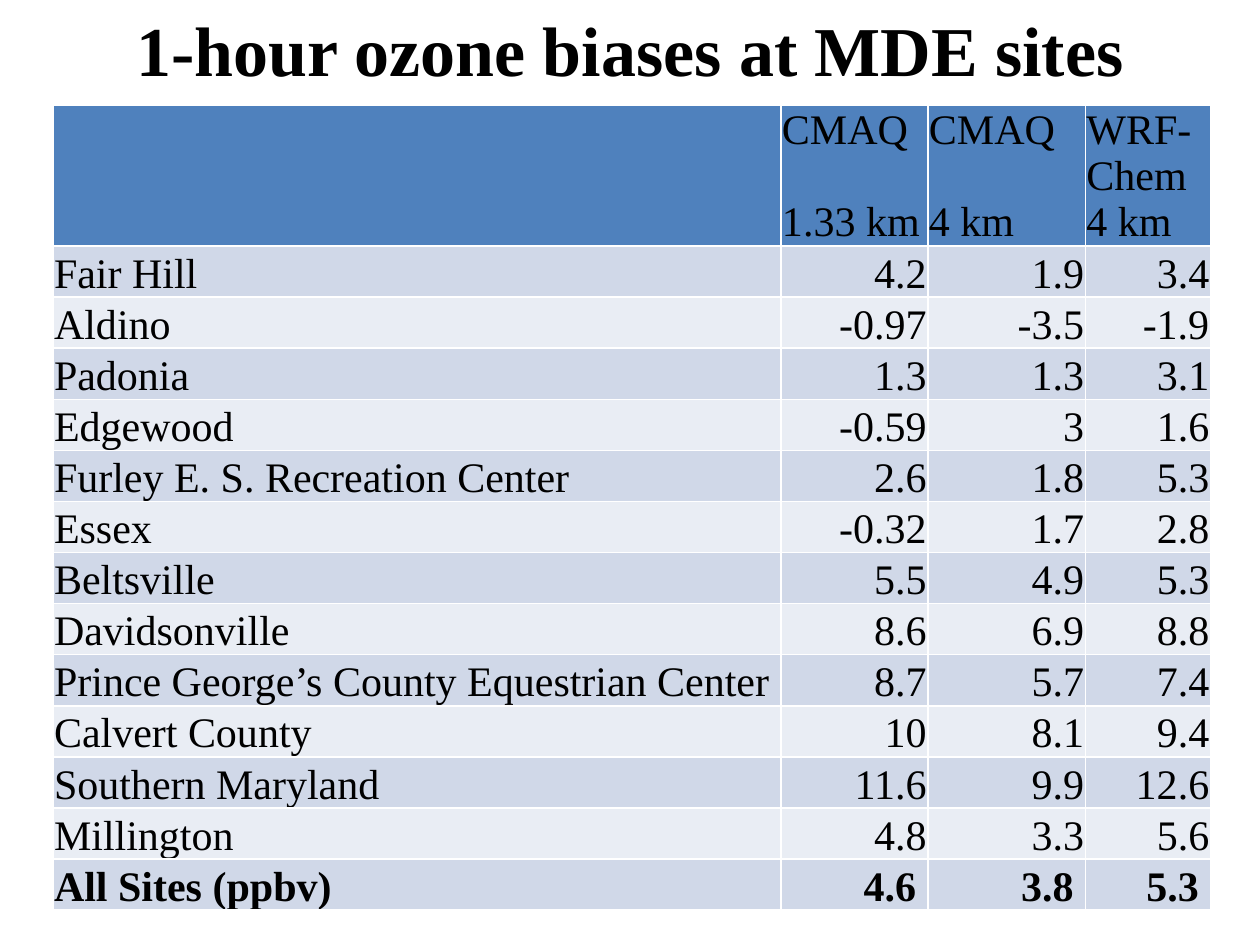
from lxml import etree
from pptx import Presentation
from pptx.dml.color import RGBColor
from pptx.enum import text
from pptx.oxml import ns
from pptx.util import Pt

FONT = "Times New Roman"
BLACK, WHITE = "000000", "FFFFFF"
HEADER_FILL = "4F81BD"
BAND_FILLS = ("D0D8E8", "E9EDF4")
BODY_SIZE = 24
LINE_HEIGHT = 26.6

COLUMN_WIDTHS = (416, 84, 90, 71.5)
HEADER_HEIGHT, ROW_HEIGHT = 79.4, 29.2

HEADERS = (
    (),
    ("CMAQ", "1.33 km"),
    ("CMAQ", "4 km"),
    ("WRF-Chem 4 km",),
)
SITE_BIASES = (
    ("Fair Hill", "4.2", "1.9", "3.4"),
    ("Aldino", "-0.97", "-3.5", "-1.9"),
    ("Padonia", "1.3", "1.3", "3.1"),
    ("Edgewood", "-0.59", "3", "1.6"),
    ("Furley E. S. Recreation Center", "2.6", "1.8", "5.3"),
    ("Essex", "-0.32", "1.7", "2.8"),
    ("Beltsville", "5.5", "4.9", "5.3"),
    ("Davidsonville", "8.6", "6.9", "8.8"),
    ("Prince George’s County Equestrian Center", "8.7", "5.7", "7.4"),
    ("Calvert County", "10", "8.1", "9.4"),
    ("Southern Maryland", "11.6", "9.9", "12.6"),
    ("Millington", "4.8", "3.3", "5.6"),
    ("All Sites (ppbv)", "4.6 ", "3.8 ", "5.3 "),
)


def color(hex_string):
    return RGBColor.from_string(hex_string)


def add_run(paragraph, words, size, bold=False):
    run = paragraph.add_run()
    run.text = words
    run.font.name = FONT
    run.font.size = Pt(size)
    run.font.bold = bold
    run.font.color.rgb = color(BLACK)


def set_borders(cell, hex_string, width):
    properties = cell._tc.get_or_add_tcPr()
    for position, side in enumerate(("lnL", "lnR", "lnT", "lnB")):
        line = etree.Element(ns.qn(f"a:{side}"), w=str(Pt(width)))
        fill = etree.SubElement(line, ns.qn("a:solidFill"))
        etree.SubElement(fill, ns.qn("a:srgbClr"), val=hex_string)
        properties.insert(position, line)


def fill_cell(cell, lines, fill, alignment, bold=False):
    cell.margin_left = cell.margin_right = cell.margin_top = Pt(0.7)
    cell.margin_bottom = Pt(0)
    cell.vertical_anchor = text.MSO_ANCHOR.BOTTOM
    cell.fill.solid()
    cell.fill.fore_color.rgb = color(fill)
    set_borders(cell, WHITE, 1)
    frame = cell.text_frame
    for number, words in enumerate(lines):
        paragraph = frame.add_paragraph() if number else frame.paragraphs[0]
        paragraph.alignment = alignment
        if number:
            paragraph.space_before = Pt(LINE_HEIGHT)
        add_run(paragraph, words, BODY_SIZE, bold)


def add_title(slide, words):
    shape = slide.shapes.add_textbox(Pt(30), Pt(0), Pt(660), Pt(55.5))
    frame = shape.text_frame
    frame.word_wrap = True
    frame.auto_size = text.MSO_AUTO_SIZE.SHAPE_TO_FIT_TEXT
    frame.paragraphs[0].alignment = text.PP_ALIGN.CENTER
    add_run(frame.paragraphs[0], words, 40, bold=True)


def add_bias_table(slide):
    row_count = len(SITE_BIASES) + 1
    height = HEADER_HEIGHT + ROW_HEIGHT * len(SITE_BIASES)
    table = slide.shapes.add_table(
        row_count, len(COLUMN_WIDTHS), Pt(30.2), Pt(60.2),
        Pt(sum(COLUMN_WIDTHS)), Pt(height)).table
    table.first_row = table.horz_banding = False
    for column, width in zip(table.columns, COLUMN_WIDTHS):
        column.width = Pt(width)
    for index, row in enumerate(table.rows):
        row.height = Pt(ROW_HEIGHT if index else HEADER_HEIGHT)

    # Header row
    for column, lines in enumerate(HEADERS):
        fill_cell(table.cell(0, column), lines, HEADER_FILL, text.PP_ALIGN.LEFT)

    # One banded row per site, with the overall row in bold
    for index, values in enumerate(SITE_BIASES):
        for column, value in enumerate(values):
            alignment = text.PP_ALIGN.RIGHT if column else text.PP_ALIGN.LEFT
            fill_cell(table.cell(index + 1, column), (value,),
                      BAND_FILLS[index % 2], alignment,
                      bold=index == len(SITE_BIASES) - 1)


def main():
    presentation = Presentation()
    presentation.slide_width, presentation.slide_height = Pt(720), Pt(540)
    slide = presentation.slides.add_slide(presentation.slide_layouts[6])
    add_bias_table(slide)
    add_title(slide, "1-hour ozone biases at MDE sites")
    presentation.save("out.pptx")


if __name__ == "__main__":
    main()
